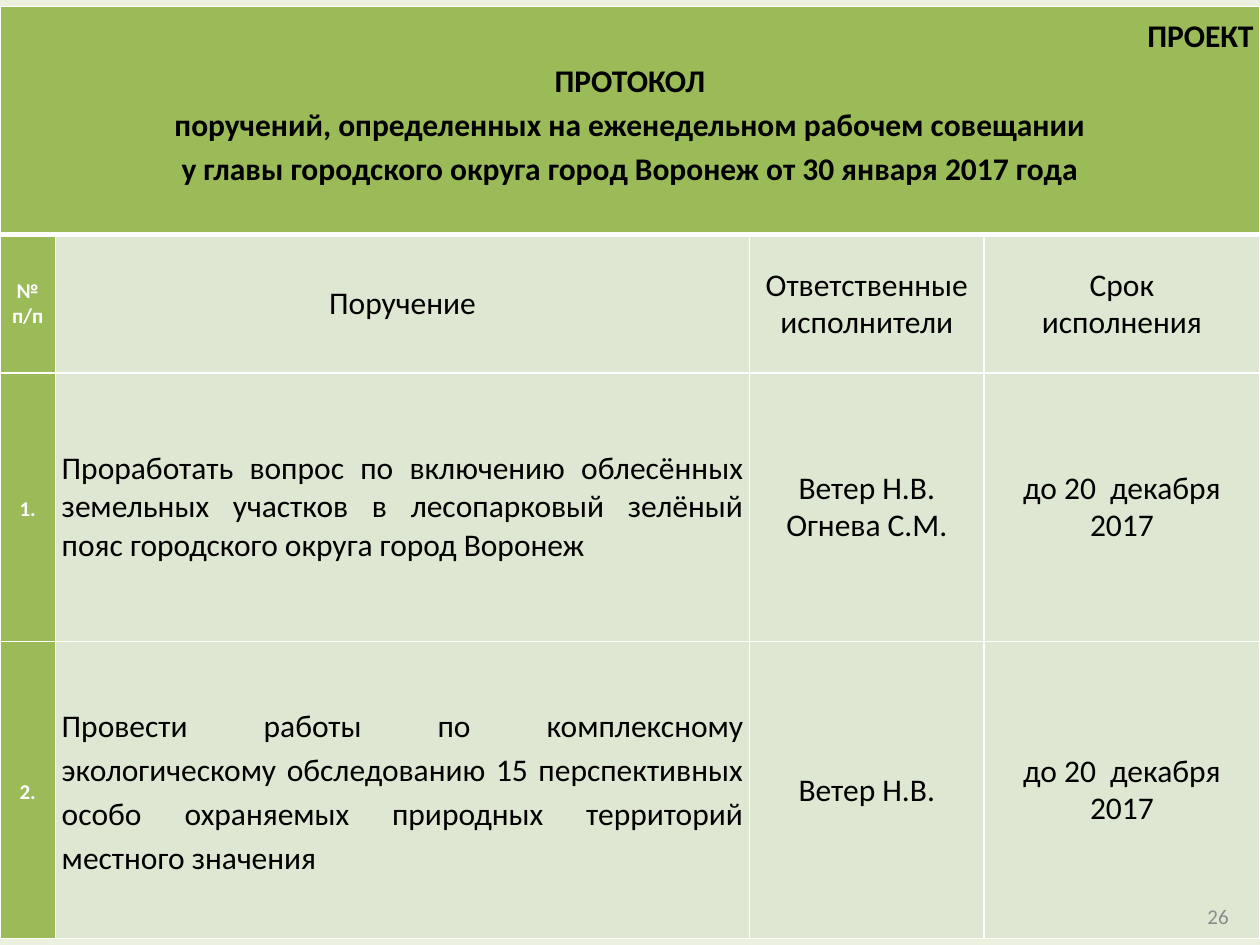
import pptx
import pptx.util
import pptx.dml.color
import pptx.enum.text
import pptx.oxml.ns
import lxml.etree

Inches, Pt = pptx.util.Inches, pptx.util.Pt
ALIGN = pptx.enum.text.PP_ALIGN
ANCHOR = pptx.enum.text.MSO_ANCHOR
GREEN, PALE, WHITE, BLACK = "9BBB59", "DEE7D1", "FFFFFF", "000000"


def rgb(color):
    return pptx.dml.color.RGBColor.from_string(color)


def write(tf, text, size=18, color=BLACK, bold=False, align=ALIGN.CENTER,
          spacing=0.97, after=0):
    """Each \\n starts a paragraph, each \\v a line within it."""
    tf.word_wrap = True
    for i, line in enumerate(text.split("\n")):
        p = tf.add_paragraph() if i else tf.paragraphs[0]
        p.text = line
        p.alignment, p.line_spacing, p.space_after = align, spacing, Pt(after)
        for r in p.runs:
            r.font.name, r.font.size, r.font.bold = "Calibri", Pt(size), bold
            r.font.color.rgb = rgb(color)


prs = pptx.Presentation()
prs.slide_width, prs.slide_height = Inches(10), Inches(7.5)
s = prs.slides.add_slide(prs.slide_layouts[6])
s.background.fill.solid()
s.background.fill.fore_color.rgb = rgb("EBF1DE")

heading = ("ПРОЕКТ\nПРОТОКОЛ\n"
           "поручений, определенных на еженедельном рабочем совещании\n"
           "у главы городского округа город Воронеж от 30 января 2017 года")
deadline = "до 20  декабря 2017"
rows = [
    ["№\vп/п", "Поручение", "Ответственные\vисполнители", "Срок\vисполнения"],
    ["1.", "Проработать вопрос по включению облесённых земельных участков "
     "в лесопарковый зелёный пояс городского округа город Воронеж",
     "Ветер Н.В.\nОгнева С.М.", deadline],
    ["2.", "Провести работы по комплексному экологическому обследованию "
     "15 перспективных особо охраняемых природных территорий местного значения",
     "Ветер Н.В.", deadline],
]
task_formats = {1: dict(align=ALIGN.JUSTIFY, spacing=1.0),
                2: dict(align=ALIGN.JUSTIFY, spacing=1.15, after=10)}
col_widths = [0.44, 5.51, 1.86, 2.19]
row_heights = [1.81, 1.1, 2.13, 2.36]

table = s.shapes.add_table(len(row_heights), len(col_widths), 0, Inches(0.05),
                           Inches(sum(col_widths)), Inches(sum(row_heights))).table
for col, width in zip(table.columns, col_widths):
    col.width = Inches(width)
for row, height in zip(table.rows, row_heights):
    row.height = Inches(height)

# Cell grid: white borders, with a thicker rule under the heading
for i in range(len(row_heights)):
    for j in range(len(col_widths)):
        cell = table.cell(i, j)
        cell.margin_left = cell.margin_right = Inches(0.05)
        cell.margin_top = cell.margin_bottom = Inches(0.01)
        cell.vertical_anchor = ANCHOR.MIDDLE
        tcPr = cell._tc.get_or_add_tcPr()
        for side in ("lnL", "lnR", "lnT", "lnB"):
            thick = (i, side) in [(0, "lnB"), (1, "lnT")]
            ln = lxml.etree.SubElement(tcPr, pptx.oxml.ns.qn("a:" + side),
                                       w=str(Pt(3 if thick else 1)))
            fill = lxml.etree.SubElement(ln, pptx.oxml.ns.qn("a:solidFill"))
            lxml.etree.SubElement(fill, pptx.oxml.ns.qn("a:srgbClr"), val=WHITE)
        cell.fill.solid()
        cell.fill.fore_color.rgb = rgb(GREEN if i == 0 or j == 0 else PALE)

head = table.cell(0, 0)
head.merge(table.cell(0, len(col_widths) - 1))
head.vertical_anchor = ANCHOR.BOTTOM
head.margin_bottom = Inches(0.36)
write(head.text_frame, heading, bold=True, spacing=1.15)
head.text_frame.paragraphs[0].alignment = ALIGN.RIGHT

for i, texts in enumerate(rows):
    for j, text in enumerate(texts):
        fmt = {}
        if j == 0:
            fmt = dict(size=12, color=WHITE, bold=True, spacing=1.15 if i else 0.97)
        elif j == 1:
            fmt = task_formats.get(i, {})
        write(table.cell(i + 1, j).text_frame, text, **fmt)

number = s.shapes.add_textbox(Inches(7.52), Inches(7.07), Inches(2.33), Inches(0.4))
number.text_frame.vertical_anchor = ANCHOR.MIDDLE
write(number.text_frame, "26", size=12, color="8C8C8C", align=ALIGN.RIGHT, spacing=1.0)

prs.save("out.pptx")
